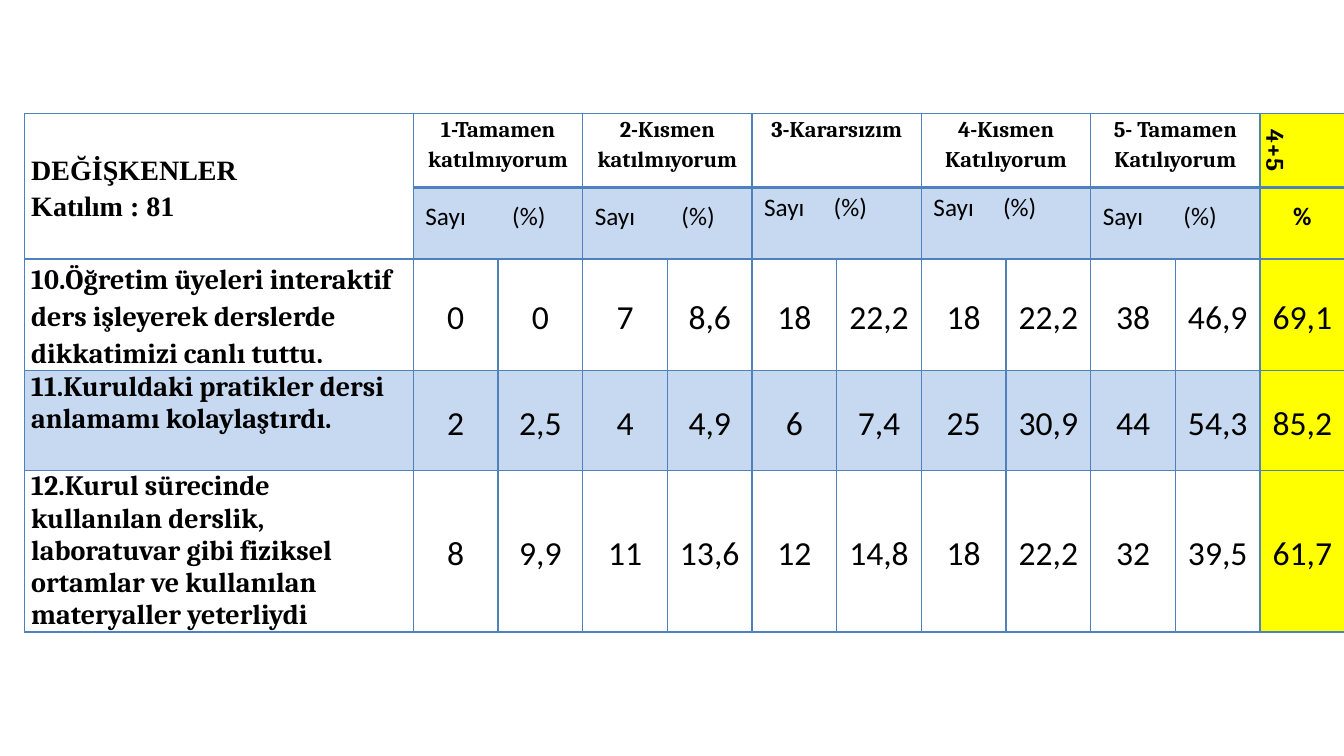
from lxml import etree
from pptx import Presentation
from pptx import util as u
from pptx.dml.color import RGBColor
from pptx.enum import text
from pptx.oxml.ns import qn

COLORS = {"ink": "000000", "border": "4F81BD", "band": "C6D9F1", "total": "FFFF00"}
CENTER, MIDDLE = text.PP_ALIGN.CENTER, text.MSO_ANCHOR.MIDDLE
TITLE = {"name": "Times New Roman", "size": u.Pt(20), "bold": True}
SCALE = {"name": "Cambria", "size": u.Pt(16), "bold": True}
SUM = {"name": "Cambria", "size": u.Pt(18), "bold": True}
UNIT = {"name": "Calibri", "size": u.Pt(18), "bold": False}
QUESTION = {"name": "Cambria", "size": u.Pt(20), "bold": True}
VALUE = {"name": "Calibri", "size": u.Pt(24), "bold": False}

ROW_HEIGHTS = [0.73, 0.71, 1.11, 0.99, 1.6]
LABEL_W, VALUE_W = 3.86, 0.84
CHOICES = [
    ("1-Tamamen katılmıyorum", 0.86, 0),
    ("2-Kısmen katılmıyorum", 0.86, 0),
    ("3-Kararsızım", 0.69, 0.18),
    ("4-Kısmen Katılıyorum", 0.69, 0.18),
    ("5- Tamamen Katılıyorum", 0.8, 0),
]
ANSWERS = [
    ("10.Öğretim üyeleri interaktif ders işleyerek derslerde dikkatimizi canlı tuttu.", 1.15,
     ["0", "0", "7", "8,6", "18", "22,2", "18", "22,2", "38", "46,9", "69,1"]),
    ("11.Kuruldaki pratikler dersi anlamamı kolaylaştırdı.", 1.0,
     ["2", "2,5", "4", "4,9", "6", "7,4", "25", "30,9", "44", "54,3", "85,2"]),
    ("12.Kurul sürecinde kullanılan derslik, laboratuvar gibi fiziksel ortamlar ve "
     "kullanılan materyaller yeterliydi", 1.0,
     ["8", "9,9", "11", "13,6", "12", "14,8", "18", "22,2", "32", "39,5", "61,7"]),
]


def set_border(cell, side, width):
    """Draw one side of a cell's border."""
    ln = etree.SubElement(cell._tc.get_or_add_tcPr(), qn(f"a:ln{side}"), w=str(u.Pt(width)))
    fill = etree.SubElement(ln, qn("a:solidFill"))
    etree.SubElement(fill, qn("a:srgbClr"), val=COLORS["border"])


def style_cell(cell, row, col, last):
    """Give a cell its insets, borders and fill."""
    insets = {"margin_left": 0.07, "margin_right": 0.07, "margin_top": 0, "margin_bottom": 0}
    for name, value in insets.items():
        setattr(cell, name, u.Inches(value))
    heavy = {(0, "B"), (1, "T")} if col else set()
    for side in "LRTB":
        set_border(cell, side, 2.25 if (row, side) in heavy else 1)
    color = "total" if col == last else "band" if row == 3 or (row == 1 and col) else None
    if color:
        cell.fill.solid()
        cell.fill.fore_color.rgb = RGBColor.from_string(COLORS[color])
    else:
        cell.fill.background()


def write(cell, content, font, align=None, anchor=None, spacing=1.15, tab=None):
    """Fill a cell with formatted paragraphs."""
    tf = cell.text_frame
    tf.text = content
    cell.vertical_anchor = anchor
    for p in tf.paragraphs:
        p.alignment, p.line_spacing = align, spacing
        if tab:
            stops = etree.SubElement(p._p.get_or_add_pPr(), qn("a:tabLst"))
            etree.SubElement(stops, qn("a:tab"), pos=str(u.Inches(tab)), algn="l")
        for r in p.runs:
            for name, value in font.items():
                setattr(r.font, name, value)
            r.font.color.rgb = RGBColor.from_string(COLORS["ink"])


def fill_header(table, last):
    """Write the two header rows with their merged cells."""
    title = table.cell(0, 0)
    title.merge(table.cell(1, 0))
    write(title, "DEĞİŞKENLER\nKatılım : 81", TITLE, anchor=MIDDLE)
    for i, (choice, tab, lift) in enumerate(CHOICES):
        col = 1 + 2 * i
        head, unit = table.cell(0, col), table.cell(1, col)
        for row, cell in enumerate((head, unit)):
            cell.merge(table.cell(row, col + 1))
        write(head, choice, SCALE, CENTER)
        write(unit, "Sayı\t(%)", UNIT, anchor=MIDDLE, spacing=u.Pt(13), tab=tab)
        unit.margin_left, unit.margin_bottom = u.Inches(0.12), u.Inches(lift)
    total = table.cell(0, last)
    write(total, "4+5", SUM, CENTER)
    total._tc.get_or_add_tcPr().set("vert", "vert")
    write(table.cell(1, last), "%", {**UNIT, "bold": True}, CENTER, MIDDLE, u.Pt(13))


def fill_answers(table):
    """Write one row for each survey question."""
    for row, (question, spacing, values) in enumerate(ANSWERS, 2):
        write(table.cell(row, 0), question, QUESTION, spacing=spacing)
        for col, value in enumerate(values, 1):
            write(table.cell(row, col), value, VALUE, CENTER, MIDDLE)


def add_survey_table(s, left, top, width, height):
    """Place the survey table in the given box."""
    last = 2 * len(CHOICES) + 1
    box = [u.Inches(v) for v in (left, top, width, height)]
    table = s.shapes.add_table(len(ROW_HEIGHTS), last + 1, *box).table
    table.first_row = table.horz_banding = False
    for col, column in enumerate(table.columns):
        column.width = u.Inches(VALUE_W if col else LABEL_W)
    for row, h in zip(table.rows, ROW_HEIGHTS):
        row.height = u.Inches(h)
    for row in range(len(ROW_HEIGHTS)):
        for col in range(last + 1):
            style_cell(table.cell(row, col), row, col, last)
    fill_header(table, last)
    fill_answers(table)


def main():
    """Build and save the survey slide."""
    prs = Presentation()
    prs.slide_width, prs.slide_height = u.Inches(13.33), u.Inches(7.5)
    s = prs.slides.add_slide(prs.slide_layouts[6])
    add_survey_table(s, 0.24, 1.13, 13.09, sum(ROW_HEIGHTS))
    prs.save("out.pptx")


if __name__ == "__main__":
    main()
